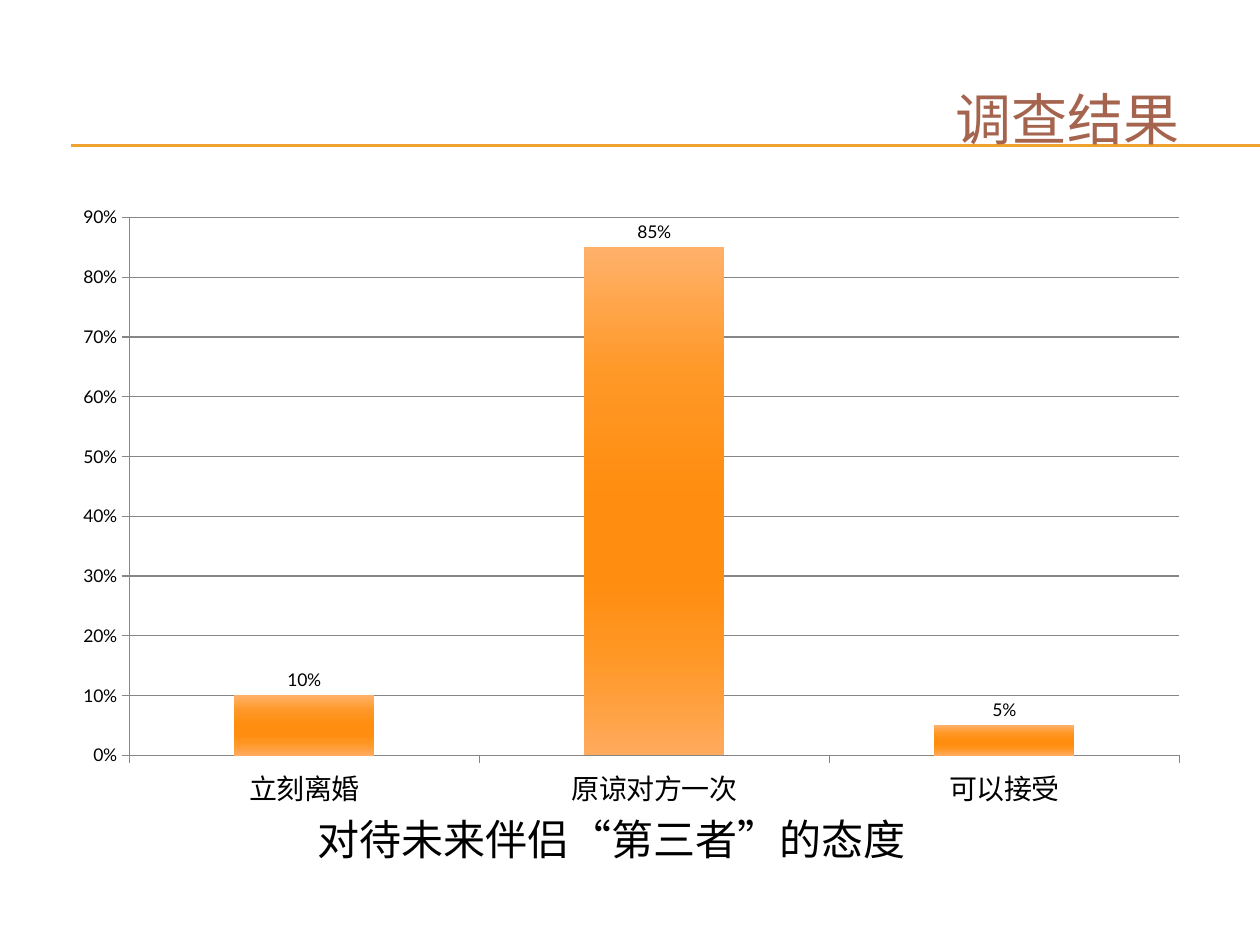
from lxml import etree
from pptx import Presentation
from pptx.chart.data import CategoryChartData
from pptx.dml.color import RGBColor
from pptx.enum.chart import XL_CHART_TYPE as ChartType, XL_LABEL_POSITION as LabelPos
from pptx.enum.chart import XL_TICK_MARK as TickMark
from pptx.enum.shapes import MSO_CONNECTOR as Connector
from pptx.enum.text import PP_ALIGN as Align
from pptx.oxml import parse_xml
from pptx.oxml.ns import nsdecls, qn
from pptx.util import Inches, Pt

COLORS = {"rule": "F0A22E", "title": "A5644E", "text": "000000", "axis": "868686"}
BAR_STOPS = [(0, "FFB16A"), (25, "FF9826"), (50, "FF8D0F"),
             (65, "FF8D0F"), (80, "FF9724"), (100, "FFAA5C")]
ATTITUDES = {"立刻离婚": 0.10, "原谅对方一次": 0.85, "可以接受": 0.05}
PLOT_AREA = {"x": 0.053, "y": 0.018, "w": 0.928, "h": 0.895}


def rgb(name):
    return RGBColor.from_string(COLORS[name])


def add_rule(s, y):
    line = s.shapes.add_connector(Connector.STRAIGHT, Inches(0.56), Inches(y),
                                  Inches(10), Inches(y))
    line.line.color.rgb = rgb("rule")
    line.line.width = Pt(0.75)
    etree.SubElement(line._element.spPr, qn("a:effectLst"))


def add_text(s, text, box, size, color, align=Align.LEFT):
    tf = s.shapes.add_textbox(*map(Inches, box)).text_frame
    tf.word_wrap = True
    p = tf.paragraphs[0]
    p.alignment = align
    r = p.add_run()
    r.text = text
    r.font.size = Pt(size)
    r.font.name = "Arial"
    r.font.color.rgb = rgb(color)


def fill_bars(series):
    """Give the bars a vertical gradient with all of BAR_STOPS."""
    stops = "".join(f'<a:gs pos="{pos * 1000}"><a:srgbClr val="{color}"/></a:gs>'
                    for pos, color in BAR_STOPS)
    series.format.fill.gradient()
    grad = series._element.find(".//" + qn("a:gradFill"))
    grad.getparent().replace(grad, parse_xml(
        f'<a:gradFill {nsdecls("a")} rotWithShape="1"><a:gsLst>{stops}</a:gsLst>'
        '<a:lin ang="5400000" scaled="0"/></a:gradFill>'))


def place_plot(chart):
    """Fix the inner plot area at PLOT_AREA, in fractions of the chart."""
    plot_area = chart._chartSpace.find(".//" + qn("c:plotArea"))
    for layout in plot_area.findall(qn("c:layout")):
        plot_area.remove(layout)
    modes = "".join(f'<c:{side}Mode val="edge"/>' for side in "xy")
    sizes = "".join(f'<c:{side} val="{val}"/>' for side, val in PLOT_AREA.items())
    plot_area.insert(0, parse_xml(
        f'<c:layout {nsdecls("c")}><c:manualLayout><c:layoutTarget val="inner"/>'
        f'{modes}{sizes}</c:manualLayout></c:layout>'))


def style_axes(chart):
    for axis in (chart.category_axis, chart.value_axis):
        axis.major_tick_mark = TickMark.OUTSIDE
        axis.minor_tick_mark = TickMark.NONE
        axis.format.line.color.rgb = rgb("axis")
        axis.format.line.width = Pt(0.75)
    chart.category_axis.tick_labels.font.size = Pt(16)
    values = chart.value_axis
    values.minimum_scale, values.maximum_scale, values.major_unit = 0, 0.9, 0.1
    values.tick_labels.number_format = "0%"
    values.tick_labels.number_format_is_linked = False
    values.has_major_gridlines = True
    values.major_gridlines.format.line.color.rgb = rgb("axis")
    values.major_gridlines.format.line.width = Pt(0.75)


def add_attitude_chart(s):
    data = CategoryChartData(number_format="0%")
    data.categories = list(ATTITUDES)
    data.add_series("Series 1", list(ATTITUDES.values()))
    chart = s.shapes.add_chart(ChartType.COLUMN_CLUSTERED, Inches(0.55), Inches(1.64),
                               Inches(8.98), Inches(4.77), data).chart
    chart.has_legend = chart.has_title = False
    chart.font.size = Pt(10)
    chart.font.name = "Lato"
    chart.font.color.rgb = rgb("text")
    style_axes(chart)
    place_plot(chart)

    plot = chart.plots[0]
    plot.vary_by_categories = False
    plot.gap_width = 150
    fill_bars(plot.series[0])
    labels = plot.series[0].data_labels
    labels.show_value = True
    labels.position = LabelPos.OUTSIDE_END
    labels.number_format = "0%"
    labels.number_format_is_linked = False


def main():
    prs = Presentation()
    prs.slide_width, prs.slide_height = Inches(10), Inches(7.5)
    s = prs.slides.add_slide(prs.slide_layouts[6])
    for y in (1.15, 1.16):
        add_rule(s, y)
    add_attitude_chart(s)
    add_text(s, "对待未来伴侣“第三者”的态度", (2.42, 6.41, 5.55, 0.5), 24, "text")
    add_text(s, "调查结果", (6.41, 0.62, 3.05, 0.64), 32, "title", Align.RIGHT)
    prs.save("out.pptx")


if __name__ == "__main__":
    main()
